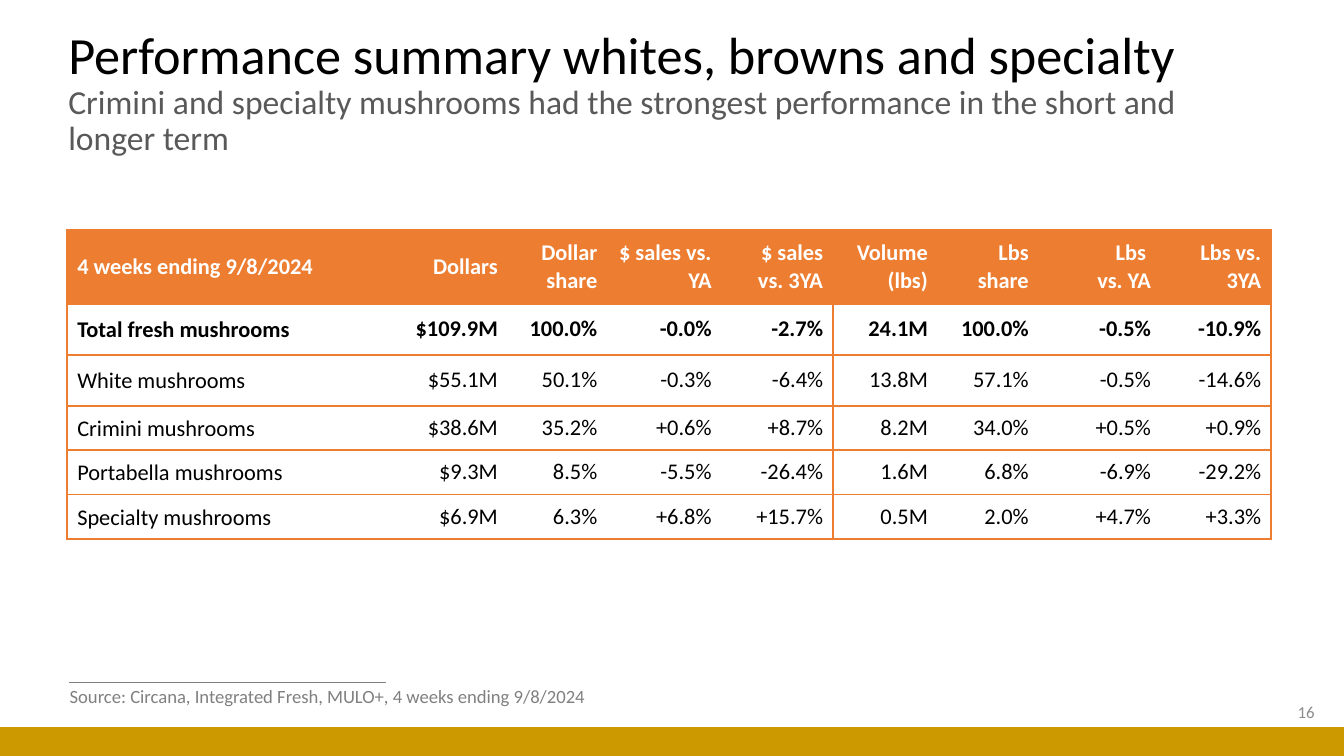
from lxml.etree import SubElement
from pptx import Presentation
from pptx.dml.color import RGBColor
from pptx.enum.shapes import MSO_CONNECTOR, MSO_SHAPE
from pptx.enum.text import MSO_ANCHOR as ANCHOR, PP_ALIGN as ALIGN
from pptx.oxml.ns import qn
from pptx.util import Inches, Pt

FONT = "Calibri"
ORANGE, GOLD, WHITE, BLACK = "ED7D31", "CC9900", "FFFFFF", "000000"
DARK_GRAY, GRAY, LIGHT_GRAY = "595959", "808080", "8C8C8C"
PLAIN_STYLE = "{2D5ABB26-0587-4C30-8999-92F81FD0307C}"
PAGE_WIDTH = Inches(10)
PAGE_HEIGHT = PAGE_WIDTH * 9 // 16

TITLE = "Performance summary whites, browns and specialty"
SUBTITLE = ("Crimini and specialty mushrooms had the strongest performance "
            "in the short and longer term")
SOURCE = "Source: Circana, Integrated Fresh, MULO+, 4 weeks ending 9/8/2024"
PAGE_NUMBER = "16"

# "\n" starts a paragraph, "\v" breaks a line
ROWS = [
    ["4 weeks ending 9/8/2024", "Dollars", "Dollar share", "$ sales vs. YA", "$ sales vs. 3YA",
     "Volume (lbs)", "Lbs\nshare", "Lbs \vvs. YA", "Lbs vs. 3YA"],
    ["Total fresh mushrooms", "$109.9M", "100.0%", "-0.0%", "-2.7%",
     "24.1M", "100.0%", "-0.5%", "-10.9%"],
    ["White mushrooms", "$55.1M", "50.1%", "-0.3%", "-6.4%",
     "13.8M", "57.1%", "-0.5%", "-14.6%"],
    ["Crimini mushrooms", "$38.6M", "35.2%", "+0.6%", "+8.7%",
     "8.2M", "34.0%", "+0.5%", "+0.9%"],
    ["Portabella mushrooms", "$9.3M", "8.5%", "-5.5%", "-26.4%",
     "1.6M", "6.8%", "-6.9%", "-29.2%"],
    ["Specialty mushrooms", "$6.9M", "6.3%", "+6.8%", "+15.7%",
     "0.5M", "2.0%", "+4.7%", "+3.3%"],
]
COLUMN_WIDTHS = [2.37, 0.91, 0.74, 0.85, 0.83, 0.78, 0.75, 0.91, 0.82]
ROW_HEIGHTS = [0.55, 0.38, 0.38, 0.33, 0.33, 0.33]
GROUP_STARTS, GROUP_ENDS = (0, 5), (4, 8)  # label and dollar columns, volume columns


def rgb(value):
    return RGBColor.from_string(value)


def format_font(font, size, color, bold=False):
    font.name, font.size, font.bold = FONT, Pt(size), bold
    font.color.rgb = rgb(color)


def write(frame, text, size=12, color=BLACK, bold=False, align=ALIGN.LEFT, spacing=None):
    frame.word_wrap = True
    frame.text = text
    for para in frame.paragraphs:
        para.alignment = align
        if spacing:
            para.line_spacing = spacing
        for span in para.runs:
            format_font(span.font, size, color, bold)


def add_text(page, text, left, top, width, height, anchor=ANCHOR.MIDDLE, **style):
    box = page.shapes.add_textbox(Inches(left), Inches(top), Inches(width), Inches(height))
    box.text_frame.vertical_anchor = anchor
    write(box.text_frame, text, **style)
    return box


def add_border(cell, side, visible):
    line = SubElement(cell._tc.get_or_add_tcPr(), qn(f"a:ln{side}"), w=str(Pt(1)))
    if visible:
        fill = SubElement(line, qn("a:solidFill"))
        SubElement(fill, qn("a:srgbClr"), val=ORANGE)
    else:
        SubElement(line, qn("a:noFill"))


def format_cell(cell, row, column):
    cell.vertical_anchor = ANCHOR.MIDDLE
    cell.margin_left = cell.margin_right = Pt(5.4)
    cell.margin_top = cell.margin_bottom = 0
    add_border(cell, "L", column in GROUP_STARTS)
    add_border(cell, "R", column in GROUP_ENDS)
    add_border(cell, "T", True)
    add_border(cell, "B", True)
    if row == 0:
        cell.fill.solid()
        cell.fill.fore_color.rgb = rgb(ORANGE)
    else:
        cell.fill.background()
    write(cell.text_frame, ROWS[row][column],
          color=WHITE if row == 0 else BLACK, bold=row < 2,
          align=ALIGN.RIGHT if column else ALIGN.LEFT,
          spacing=1.07 if row and not column else None)


def add_performance_table(page):
    frame = page.shapes.add_table(
        len(ROWS), len(COLUMN_WIDTHS), Inches(0.5), Inches(1.71),
        Inches(sum(COLUMN_WIDTHS)), Inches(sum(ROW_HEIGHTS)))
    table = frame.table
    table.horz_banding = False
    table._tbl.tblPr.find(qn("a:tableStyleId")).text = PLAIN_STYLE
    for column, width in zip(table.columns, COLUMN_WIDTHS):
        column.width = Inches(width)
    for row, height in zip(table.rows, ROW_HEIGHTS):
        row.height = Inches(height)
    for row in range(len(ROWS)):
        for column in range(len(COLUMN_WIDTHS)):
            format_cell(table.cell(row, column), row, column)


def add_footer(page):
    rule = page.shapes.add_connector(
        MSO_CONNECTOR.STRAIGHT, Inches(0.51), Inches(5.08), Inches(2.87), Inches(5.08))
    rule.line.color.rgb = rgb(GRAY)
    rule.line.width = Pt(0.5)
    SubElement(rule._element.spPr, qn("a:effectLst"))
    band_top = Inches(5.41)
    band = page.shapes.add_shape(
        MSO_SHAPE.RECTANGLE, 0, band_top, PAGE_WIDTH, PAGE_HEIGHT - band_top)
    band.shadow.inherit = False
    band.fill.solid()
    band.fill.fore_color.rgb = rgb(GOLD)
    band.line.fill.background()
    add_text(page, PAGE_NUMBER, 7.63, 5.15, 2.25, 0.3,
             size=9, color=LIGHT_GRAY, align=ALIGN.RIGHT)
    add_text(page, SOURCE, 0.42, 5.05, 4.18, 0.27, anchor=ANCHOR.TOP, size=10, color=GRAY)


def main():
    deck = Presentation()
    deck.slide_width, deck.slide_height = PAGE_WIDTH, PAGE_HEIGHT
    page = deck.slides.add_slide(deck.slide_layouts[6])
    heading = add_text(page, f"{TITLE}\v{SUBTITLE}", 0.41, 0.3, 8.85, 0.79,
                       size=28, spacing=0.9)
    format_font(heading.text_frame.paragraphs[0].runs[1].font, 18, DARK_GRAY)
    add_performance_table(page)
    add_footer(page)
    deck.save("out.pptx")


if __name__ == "__main__":
    main()
